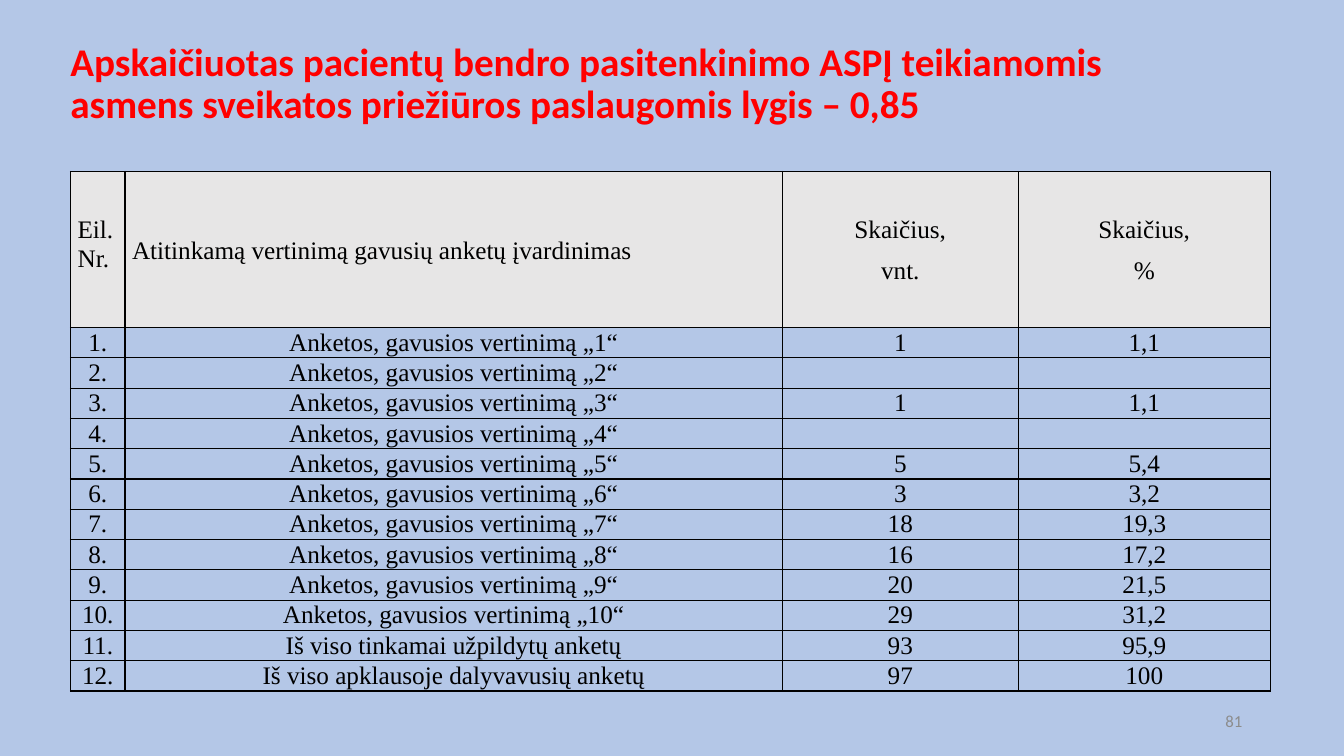
import pptx
import pptx.util
import pptx.dml.color
import pptx.enum.text
import pptx.oxml.ns
from lxml import etree

WIDTH, HEIGHT = 13.33, 7.5
COLORS = {"page": "B4C7E7", "title": "FF0000", "text": "000000",
          "header": "E7E6E6", "number": "8C8C8C"}
SERIF, SANS = "Times New Roman", "Calibri"
ALIGN = pptx.enum.text.PP_ALIGN
ANCHOR = pptx.enum.text.MSO_ANCHOR

COLUMNS = [0.54, 6.52, 2.34, 2.5]
HEADER_HEIGHT, ROW_HEIGHT = 1.55, 0.3
HEADERS = ["Eil. Nr.", "Atitinkamą vertinimą gavusių anketų įvardinimas",
           "Skaičius,\nvnt.", "Skaičius,\n%"]
COUNTS = [("1", "1,1"), ("", ""), ("1", "1,1"), ("", ""), ("5", "5,4"),
          ("3", "3,2"), ("18", "19,3"), ("16", "17,2"), ("20", "21,5"),
          ("29", "31,2"), ("93", "95,9"), ("97", "100")]
TOTALS = ["Iš viso tinkamai užpildytų anketų",
          "Iš viso apklausoje dalyvavusių anketų"]


def inches(value):
    return pptx.util.Inches(value)


def rgb(name):
    return pptx.dml.color.RGBColor.from_string(COLORS[name])


def write(frame, text, size=18, font=SERIF, color="text", bold=False,
          align=ALIGN.CENTER, spacing=1.0, after=0):
    """Write one paragraph for each line of the text."""
    for index, line in enumerate(text.split("\n")):
        para = frame.paragraphs[0] if index == 0 else frame.add_paragraph()
        para.alignment = align
        para.line_spacing = spacing
        para.space_after = pptx.util.Pt(after)
        span = para.add_run()
        span.text = line
        span.font.size = pptx.util.Pt(size)
        span.font.name = font
        span.font.bold = bold
        span.font.color.rgb = rgb(color)


def add_text(page, text, left, top, width, height, **style):
    box = page.shapes.add_textbox(inches(left), inches(top),
                                  inches(width), inches(height))
    box.text_frame.word_wrap = True
    box.text_frame.vertical_anchor = ANCHOR.MIDDLE
    write(box.text_frame, text, **style)


def add_borders(cell):
    """Draw the four cell edges; they precede the fill in the cell XML."""
    properties = cell._tc.get_or_add_tcPr()
    for index, side in enumerate(("lnL", "lnR", "lnT", "lnB")):
        line = etree.Element(pptx.oxml.ns.qn("a:" + side), w="12700")
        fill = etree.SubElement(line, pptx.oxml.ns.qn("a:solidFill"))
        etree.SubElement(fill, pptx.oxml.ns.qn("a:srgbClr"), val=COLORS["text"])
        properties.insert(index, line)


def end_paragraph(para, size):
    """Set the size of the paragraph mark, which also counts in row height."""
    end = etree.SubElement(para._p, pptx.oxml.ns.qn("a:endParaRPr"),
                           sz=str(size * 100))
    etree.SubElement(end, pptx.oxml.ns.qn("a:latin"), typeface=SERIF)


def fill_cell(cell, text, header=False, anchor=ANCHOR.MIDDLE, top=0, **style):
    cell.margin_left = cell.margin_right = inches(0.07)
    cell.margin_top, cell.margin_bottom = inches(top), 0
    cell.vertical_anchor = anchor
    if header:
        cell.fill.solid()
        cell.fill.fore_color.rgb = rgb("header")
    else:
        cell.fill.background()
    add_borders(cell)
    if text:
        write(cell.text_frame, text, **style)
    for para in cell.text_frame.paragraphs:
        end_paragraph(para, 18 if text else 12)


def add_survey_table(page, left, top):
    labels = [f"Anketos, gavusios vertinimą „{score}“" for score in range(1, 11)]
    rows = [(f"{number}.", label, *counts) for number, (label, counts)
            in enumerate(zip(labels + TOTALS, COUNTS), 1)]
    height = HEADER_HEIGHT + ROW_HEIGHT * len(rows)
    table = page.shapes.add_table(len(rows) + 1, len(COLUMNS), inches(left),
                                  inches(top), inches(sum(COLUMNS)),
                                  inches(height)).table
    table.first_row = table.horz_banding = False
    for column, width in zip(table.columns, COLUMNS):
        column.width = inches(width)
    for index, row in enumerate(table.rows):
        row.height = inches(ROW_HEIGHT if index else HEADER_HEIGHT)

    # Header row
    for col, text in enumerate(HEADERS):
        first = col == 0
        fill_cell(table.cell(0, col), text, header=True,
                  anchor=ANCHOR.TOP if first else ANCHOR.MIDDLE,
                  top=0.42 if first else 0,
                  align=ALIGN.JUSTIFY if col < 2 else ALIGN.CENTER,
                  spacing=1.07, after=8)
    # Survey rows
    for index, values in enumerate(rows, 1):
        for col, text in enumerate(values):
            fill_cell(table.cell(index, col), text)


def main():
    deck = pptx.Presentation()
    deck.slide_width, deck.slide_height = inches(WIDTH), inches(HEIGHT)
    page = deck.slides.add_slide(deck.slide_layouts[6])
    page.background.fill.solid()
    page.background.fill.fore_color.rgb = rgb("page")

    # Title
    add_text(page, "Apskaičiuotas pacientų bendro pasitenkinimo ASPĮ teikiamomis "
             "asmens sveikatos priežiūros paslaugomis lygis – 0,85",
             0.6, 0.55, 10.58, 0.58, size=28, font=SANS, color="title",
             bold=True, align=ALIGN.LEFT, spacing=0.9)
    # Survey results
    add_survey_table(page, 0.7, 1.7)
    # Page number
    add_text(page, "81", 9.42, 6.95, 3, 0.4, size=12, font=SANS,
             color="number", align=ALIGN.RIGHT)
    deck.save("out.pptx")


if __name__ == "__main__":
    main()
